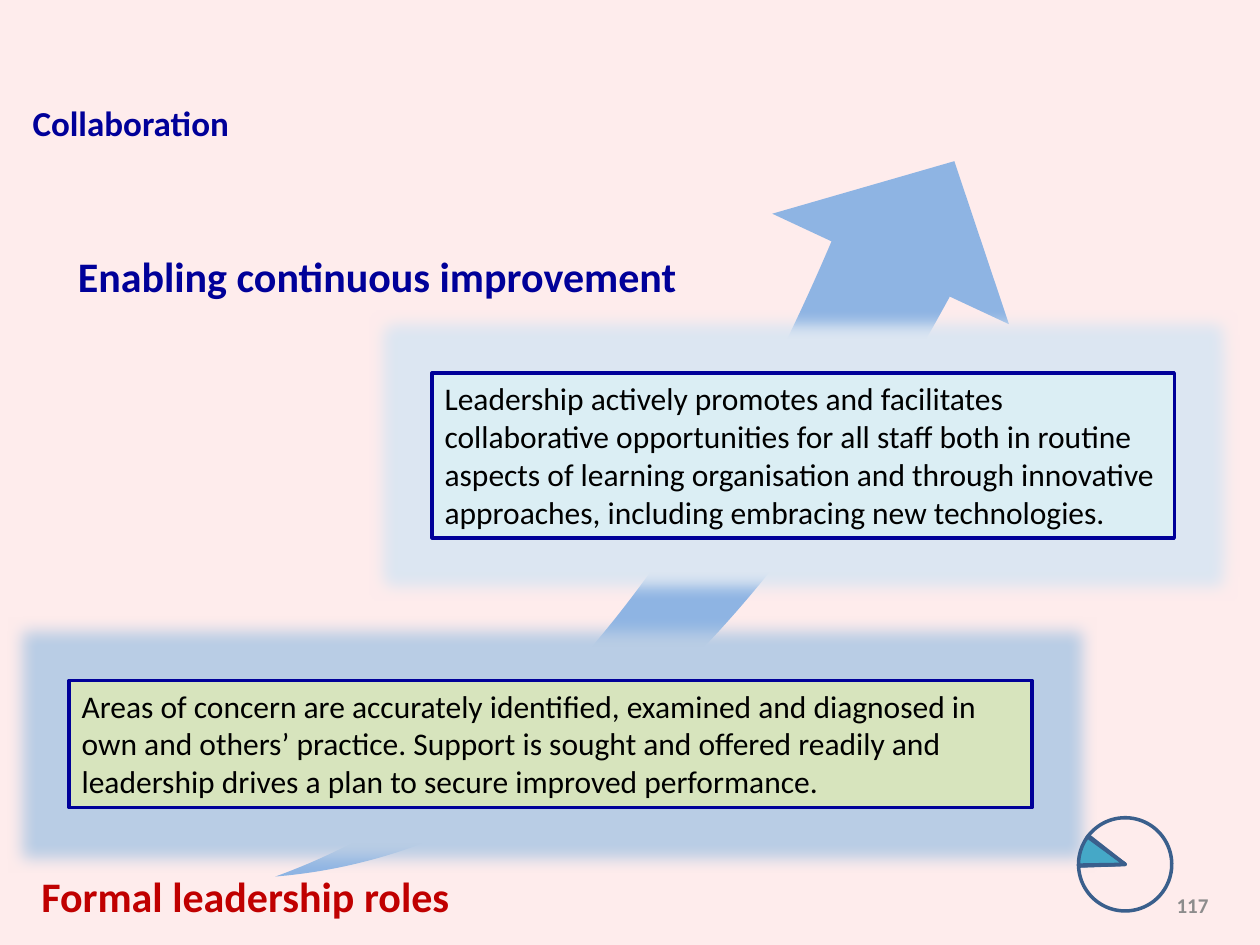
"""Build the slide on collaboration in formal leadership roles."""
import dataclasses

import pptx
import pptx.dml.color
import pptx.enum.shapes
import pptx.enum.text
import pptx.oxml
import pptx.oxml.ns
import pptx.util

SCALE = 9144
FORMS = pptx.enum.shapes.MSO_SHAPE
FIT = pptx.enum.text.MSO_AUTO_SIZE
ANCHOR = pptx.enum.text.MSO_ANCHOR
ALIGN = pptx.enum.text.PP_ALIGN


@dataclasses.dataclass(frozen=True)
class Theme:
    """Hold the colours and type sizes."""
    font: str = "Calibri"
    back: str = "FEECEC"
    navy: str = "000099"
    red: str = "C00000"
    black: str = "000000"
    grey: str = "8C8C8C"
    arrow: str = "8EB4E3"
    green: str = "D7E4BD"
    aqua: str = "DBEEF4"
    deep: str = "B9CDE5"
    pale: str = "DCE6F2"
    slice: str = "45A8C7"
    rim: str = "3A5F8C"
    head: int = 24
    topic: int = 20
    body: int = 18
    small: int = 12
    line: int = 2


THEME = Theme()


def px(*sizes):
    """Turn px lengths into EMU."""
    return [pptx.util.Emu(size * SCALE) for size in sizes]


def rgb(code):
    """Turn a hex code into a colour."""
    return pptx.dml.color.RGBColor.from_string(code)


def write(shape, text, size, color, bold=False):
    """Set wrapped text in one style and return its frame."""
    frame = shape.text_frame
    frame.text = text
    frame.word_wrap = True
    frame.auto_size = FIT.SHAPE_TO_FIT_TEXT
    part = frame.paragraphs[0]
    part.alignment = ALIGN.LEFT
    font = part.runs[0].font
    font.name, font.size, font.bold = THEME.font, pptx.util.Pt(size), bold
    font.color.rgb = rgb(color)
    return frame


def label(slide, box, text, size, color):
    """Add a bold text box and return its frame."""
    return write(slide.shapes.add_textbox(*px(*box)), text, size, color, True)


def form(shapes, kind, box, fill=None, line=None):
    """Add a preset shape with plain fill and line."""
    shape = shapes.add_shape(kind, *px(*box))
    shape.shadow.inherit = False
    if fill:
        shape.fill.solid()
        shape.fill.fore_color.rgb = rgb(fill)
    else:
        shape.fill.background()
    if line:
        shape.line.color.rgb = rgb(line)
        shape.line.width = pptx.util.Pt(THEME.line)
    else:
        shape.line.fill.background()
    return shape


def panel(slide, box, text, fill, halo):
    """Add a framed text panel with a soft glow."""
    shape = form(slide.shapes, FORMS.RECTANGLE, box, fill, THEME.navy)
    frame = write(shape, text, THEME.body, THEME.black)
    frame.vertical_anchor = ANCHOR.TOP
    glow = pptx.oxml.parse_xml(
        f'<a:glow {pptx.oxml.ns.nsdecls("a")} rad="228600">'
        f'<a:srgbClr val="{halo}"/></a:glow>')
    shape.element.spPr.find(pptx.oxml.ns.qn("a:effectLst")).append(glow)


def swoosh(slide):
    """Add the rising arrow."""
    shape = form(slide.shapes, FORMS.SWOOSH_ARROW, (172, 219, 710, 412),
                 THEME.arrow)
    shape.adjustments[0] = shape.adjustments[1] = 0.25
    shape.rotation = 288.6
    shape.element.spPr.xfrm.set("flipV", "1")


def dial(slide):
    """Add the grouped pie with one filled slice."""
    group = slide.shapes.add_group_shape()
    wedges = ((233.72, 198.04, None), (198.5, 199.46, None),
              (199.28, 236.43, THEME.slice), (237.68, 238.17, None))
    for start, end, fill in wedges:
        shape = form(group.shapes, FORMS.PIE, (856, 649, 74, 74), fill,
                     THEME.rim)
        shape.adjustments[0] = start * 0.6
        shape.adjustments[1] = end * 0.6
        shape.rotation = 339.8


def main():
    """Build and save the slide."""
    deck = pptx.Presentation()
    deck.slide_width, deck.slide_height = px(1000, 750)
    slide = deck.slides.add_slide(deck.slide_layouts[6])
    slide.background.fill.solid()
    slide.background.fill.fore_color.rgb = rgb(THEME.back)
    swoosh(slide)
    label(slide, (16, 76, 902, 44), "Collaboration", THEME.topic, THEME.navy)
    label(slide, (52, 194, 617, 50), "Enabling continuous improvement",
          THEME.head, THEME.navy)
    panel(slide, (55, 540, 764, 101),
          "Areas of concern are accurately identified, examined and diagnosed "
          "in own and others’ practice. Support is sought and offered readily "
          "and leadership drives a plan to secure improved performance.",
          THEME.green, THEME.deep)
    panel(slide, (343, 296, 589, 131),
          "Leadership actively promotes and facilitates collaborative "
          "opportunities for all staff both in routine aspects of learning "
          "organisation and through innovative approaches, including embracing "
          "new technologies.", THEME.aqua, THEME.pale)
    page = label(slide, (736, 698, 233, 40), "117", THEME.small, THEME.grey)
    page.auto_size = FIT.NONE
    page.vertical_anchor = ANCHOR.MIDDLE
    page.paragraphs[0].alignment = ALIGN.RIGHT
    label(slide, (23, 686, 358, 50), "Formal leadership roles", THEME.head,
          THEME.red)
    dial(slide)
    deck.save("out.pptx")


if __name__ == "__main__":
    main()
